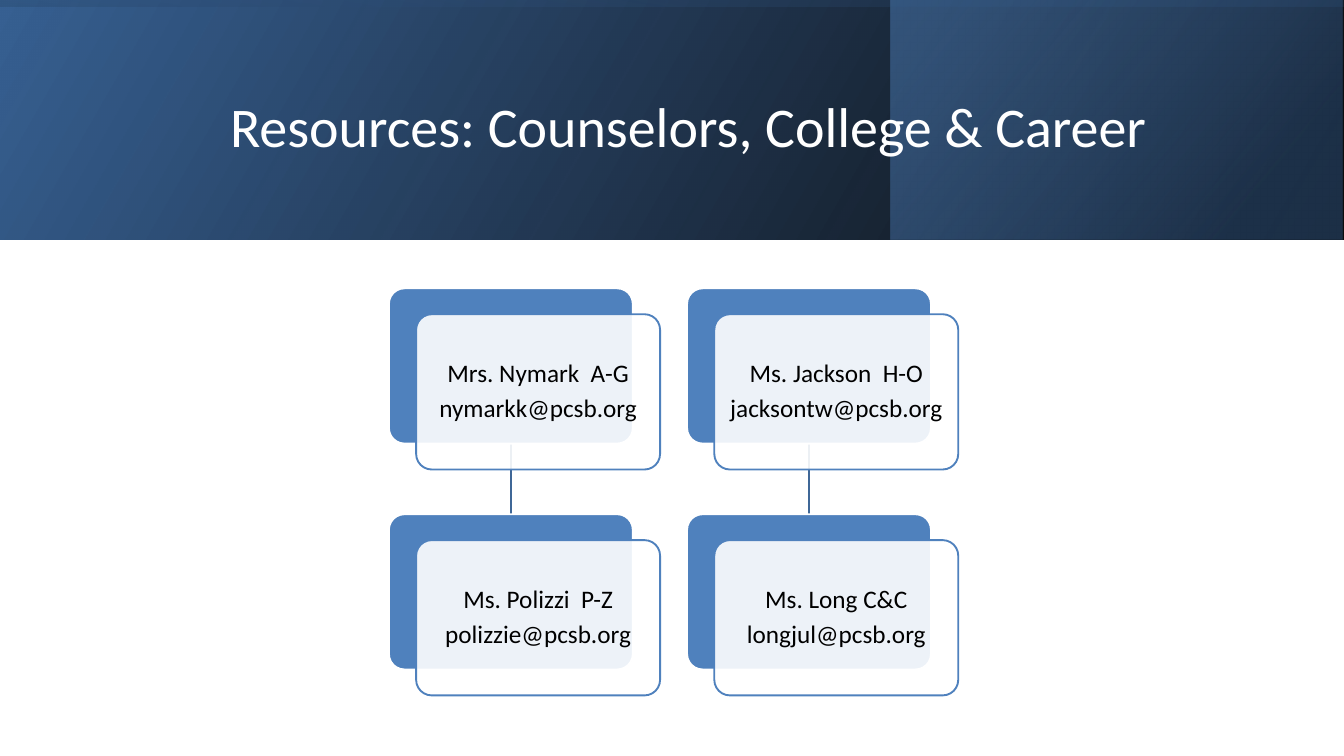
from lxml.etree import SubElement
from pptx import Presentation
from pptx.dml.color import RGBColor
from pptx.enum.shapes import MSO_CONNECTOR, MSO_SHAPE
from pptx.enum.text import MSO_ANCHOR, PP_ALIGN
from pptx.oxml.ns import qn
from pptx.util import Cm, Pt

COLORS = {
    "black": "000000",
    "white": "FFFFFF",
    "deep": "376092",
    "navy": "254061",
    "blue": "4F81BD",
    "link": "3F6797",
}
FONT = "Calibri"
SLIDE_W, SLIDE_H = 50.8, 28.58
BAND_H = 9.04

# Each column holds an upper and a lower card, joined by a line.
COUNSELORS = [
    [("Mrs. Nymark  A-G", "nymarkk@pcsb.org"),
     ("Ms. Polizzi  P-Z", "polizzie@pcsb.org")],
    [("Ms. Jackson  H-O", "jacksontw@pcsb.org"),
     ("Ms. Long C&C", "longjul@pcsb.org")],
]
CARD_W, CARD_H = 9.22, 5.87
PITCH_X, PITCH_Y = 11.27, 8.54
FRONT_DX, FRONT_DY = 1.03, 0.98


def color(name):
    return RGBColor.from_string(COLORS[name])


def set_alpha(fill_element, percent):
    """Make the colour inside a fill or gradient stop partly transparent."""
    rgb = next(fill_element.iter(qn("a:srgbClr")))
    SubElement(rgb, qn("a:alpha")).set("val", str(percent * 1000))


def format_text(frame, size, color_name):
    frame.word_wrap = True
    frame.vertical_anchor = MSO_ANCHOR.MIDDLE
    for paragraph in frame.paragraphs:
        paragraph.alignment = PP_ALIGN.CENTER
        for run in paragraph.runs:
            run.font.name = FONT
            run.font.size = Pt(size)
            run.font.color.rgb = color(color_name)


def add_band_layer(slide, left, top, width, height, stops, angle, rotation=0):
    """Add a mirrored gradient rectangle; stops are (position, colour, alpha)."""
    layer = slide.shapes.add_shape(
        MSO_SHAPE.RECTANGLE, Cm(left), Cm(top), Cm(width), Cm(height))
    layer.shadow.inherit = False
    layer.line.fill.background()
    layer.rotation = rotation
    layer.element.spPr.find(qn("a:xfrm")).set("flipH", "1")
    layer.fill.gradient()
    layer.fill.gradient_angle = angle
    for stop, (position, color_name, _) in zip(layer.fill.gradient_stops, stops):
        stop.position = position
        stop.color.rgb = color(color_name)
    for stop_element, (_, _, alpha) in zip(layer.element.spPr.iter(qn("a:gs")), stops):
        set_alpha(stop_element, alpha)


def add_header(slide, left, top, width, height):
    add_band_layer(slide, left, top, width, height,
                   [(0, "black", 96), (1, "deep", 100)], 30)
    add_band_layer(slide, left + 33.68, top, 17.07, height,
                   [(0.19, "navy", 68), (1, "blue", 48)], 40)
    turn = (width - height) / 2
    add_band_layer(slide, left + turn, top - turn, height, width,
                   [(0.23, "deep", 16), (0.99, "black", 45)], 10, rotation=270)

    title = slide.shapes.title
    title.left, title.top = Cm(left + 5.77), Cm(top + 1.45)
    title.width, title.height = Cm(40.49), Cm(6.58)
    title.text_frame.text = "Resources: Counselors, College & Career"
    format_text(title.text_frame, 60, "white")
    title.element.getparent().append(title.element)  # in front of the band


def add_panel(slide, left, top, fill_name, line_name):
    panel = slide.shapes.add_shape(
        MSO_SHAPE.ROUNDED_RECTANGLE, Cm(left), Cm(top), Cm(CARD_W), Cm(CARD_H))
    panel.shadow.inherit = False
    panel.adjustments[0] = 0.1
    panel.fill.solid()
    panel.fill.fore_color.rgb = color(fill_name)
    panel.line.color.rgb = color(line_name)
    panel.line.width = Pt(2)
    return panel


def add_card(slide, left, top, lines):
    """Add a back panel with the text panel over it; return the back panel."""
    back = add_panel(slide, left, top, "blue", "white")
    front = add_panel(slide, left + FRONT_DX, top + FRONT_DY, "white", "blue")
    set_alpha(front.element.spPr.find(qn("a:solidFill")), 90)

    frame = front.text_frame
    # The rounded corners inset the text further, so the margins stay small.
    frame.margin_left = frame.margin_right = Cm(0.25)
    frame.margin_top = frame.margin_bottom = Cm(0.25)
    frame.text = "\n".join(lines)
    format_text(frame, 27, "black")
    for paragraph in frame.paragraphs:
        paragraph.line_spacing = 0.9
        paragraph.space_after = Pt(9)
    return back


def add_column(slide, left, top, people):
    middle = Cm(left + CARD_W / 2)
    link = slide.shapes.add_connector(
        MSO_CONNECTOR.STRAIGHT, middle, Cm(top + CARD_H), middle, Cm(top + PITCH_Y))
    link.line.color.rgb = color("link")
    link.line.width = Pt(2)
    SubElement(link.element.spPr, qn("a:effectLst"))

    upper, lower = [add_card(slide, left, top + row * PITCH_Y, lines)
                    for row, lines in enumerate(people)]
    link.begin_connect(upper, 2)
    link.end_connect(lower, 0)


def add_counselors(slide, left, top):
    for index, people in enumerate(COUNSELORS):
        add_column(slide, left + index * PITCH_X, top, people)


def main():
    presentation = Presentation()
    presentation.slide_width, presentation.slide_height = Cm(SLIDE_W), Cm(SLIDE_H)
    slide = presentation.slides.add_slide(presentation.slide_layouts[5])
    add_header(slide, 0, 0, SLIDE_W, BAND_H)
    add_counselors(slide, 14.7, 10.9)
    presentation.save("out.pptx")


if __name__ == "__main__":
    main()
